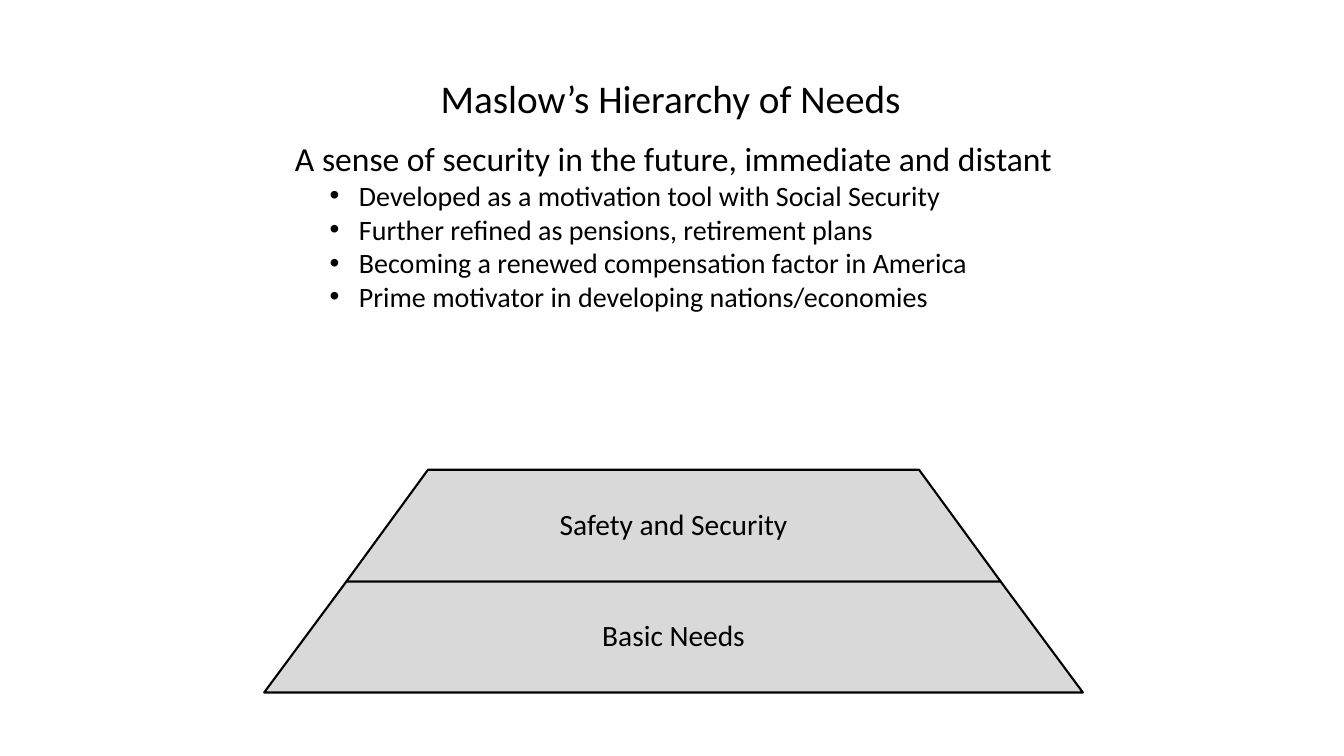
from dataclasses import dataclass

from lxml import etree
from pptx import Presentation
from pptx.dml.color import RGBColor
from pptx.enum.text import MSO_ANCHOR, MSO_AUTO_SIZE, PP_ALIGN
from pptx.oxml.ns import qn
from pptx.util import Inches, Pt

LEFT, CENTER = PP_ALIGN.LEFT, PP_ALIGN.CENTER
TOP, MIDDLE = MSO_ANCHOR.TOP, MSO_ANCHOR.MIDDLE
NO_AUTOFIT = MSO_AUTO_SIZE.NONE
COLORS = {"text": "000000", "line": "000000", "tier": "D9D9D9"}
FONT = "Calibri"
PYRAMID_CENTER = 6.68


@dataclass(frozen=True)
class Edge:
    """A horizontal edge of the pyramid, in inches."""
    y: float
    width: float

    @property
    def ends(self) -> list:
        """Return the left and right end points."""
        half = self.width / 2
        return [(Inches(PYRAMID_CENTER + dx), Inches(self.y)) for dx in (-half, half)]


@dataclass(frozen=True)
class Tier:
    """A labelled pyramid level between two edges."""
    label: str
    top: Edge
    bottom: Edge
    inset: float


EDGES = [Edge(4.66, 4.87), Edge(5.77, 6.49), Edge(6.87, 8.12)]
TIERS = [
    Tier("Safety and Security", EDGES[0], EDGES[1], 1.17),
    Tier("Basic Needs", EDGES[1], EDGES[2], 1.45),
]
BULLETS = [
    "Developed as a motivation tool with Social Security",
    "Further refined as pensions, retirement plans",
    "Becoming a renewed compensation factor in America",
    "Prime motivator in developing nations/economies",
]


def set_text(p, text: str, *, size: float, align=CENTER, spacing: float = 1.0,
             level: int = 0, margin: float = 0, indent: float = 0,
             bullet: str = "") -> None:
    """Write formatted text into a paragraph."""
    p.alignment, p.level, p.line_spacing = align, level, spacing
    p.space_before = p.space_after = Pt(0)
    r = p.add_run()
    r.text = text
    r.font.name, r.font.size = FONT, Pt(size)
    r.font.color.rgb = RGBColor.from_string(COLORS["text"])
    pPr = p._p.get_or_add_pPr()
    pPr.set("marL", str(Inches(margin)))
    pPr.set("indent", str(Inches(indent)))
    if bullet:
        etree.SubElement(pPr, qn("a:buFont"), typeface="Arial")
        etree.SubElement(pPr, qn("a:buChar"), char=bullet)
    else:
        etree.SubElement(pPr, qn("a:buNone"))


def place(sp, left: float, top: float, width: float, height: float, anchor, wrap: bool):
    """Move a placeholder and return its text frame."""
    sp.left, sp.top = Inches(left), Inches(top)
    sp.width, sp.height = Inches(width), Inches(height)
    tf = sp.text_frame
    tf.auto_size, tf.word_wrap, tf.vertical_anchor = NO_AUTOFIT, wrap, anchor
    return tf


def draw_tier(s, tier: Tier) -> None:
    """Draw one pyramid level with its label."""
    start, top_right = tier.top.ends
    bottom_left, bottom_right = tier.bottom.ends
    builder = s.shapes.build_freeform(*start)
    builder.add_line_segments([top_right, bottom_right, bottom_left], close=True)
    sp = builder.convert_to_shape()
    sp.shadow.inherit = False
    sp.fill.solid()
    sp.fill.fore_color.rgb = RGBColor.from_string(COLORS["tier"])
    sp.line.color.rgb = RGBColor.from_string(COLORS["line"])
    sp.line.width = Pt(1.5)
    tf = sp.text_frame
    tf.word_wrap, tf.vertical_anchor = True, MIDDLE
    tf.margin_left = tf.margin_right = Inches(tier.inset)
    tf.margin_top = tf.margin_bottom = Inches(0.03)
    set_text(tf.paragraphs[0], tier.label, size=21, spacing=0.9)


def main() -> None:
    """Build and save the slide."""
    prs = Presentation()
    prs.slide_width, prs.slide_height = Inches(13.33), Inches(7.5)
    s = prs.slides.add_slide(prs.slide_layouts[1])
    for tier in TIERS:
        draw_tier(s, tier)
    tf = place(s.shapes.title, 4.27, 0.69, 4.81, 0.57, MIDDLE, False)
    set_text(tf.paragraphs[0], "Maslow’s Hierarchy of Needs", size=28, align=LEFT)
    tf = place(s.placeholders[1], 2.43, 1.32, 8.5, 1.85, TOP, True)
    set_text(tf.paragraphs[0], "A sense of security in the future, immediate and distant",
             size=24)
    for text in BULLETS:
        set_text(tf.add_paragraph(), text, size=20, align=LEFT, level=1,
                 margin=1.03, indent=-0.29, bullet="•")
    prs.save("out.pptx")


if __name__ == "__main__":
    main()
